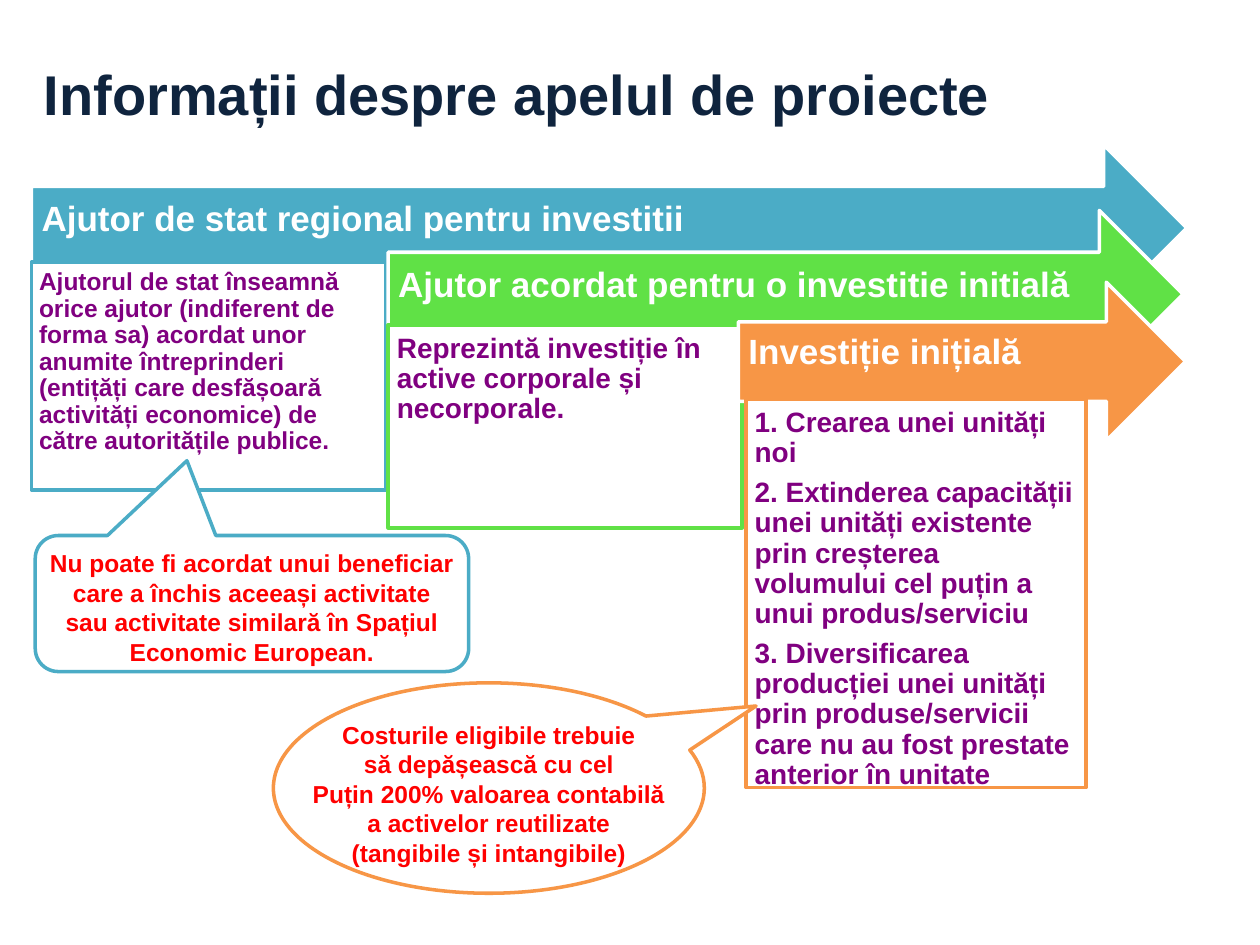
from pptx import Presentation
from pptx.dml.color import RGBColor
from pptx.enum.shapes import MSO_SHAPE
from pptx.enum.text import MSO_ANCHOR, PP_ALIGN
from pptx.util import Inches, Pt

NAVY, WHITE, PURPLE, RED = "0F243E", "FFFFFF", "800080", "FF0000"
TEAL, GREEN, ORANGE = "4BACC6", "60E146", "F79646"

# Each stage: colour, heading, arrow box, body box, body size, body inset, paragraphs
STAGES = [
    (TEAL, "Ajutor de stat regional pentru investitii",
     (0.25, 1.15, 9.17, 1.32), (0.25, 2.08, 2.81, 1.81), 14, 0.06,
     ["Ajutorul de stat înseamnă orice ajutor (indiferent de forma sa) acordat "
      "unor anumite întreprinderi (entițăți care desfășoară activități economice) "
      "de către autoritățile publice."]),
    (GREEN, "Ajutor acordat pentru o investitie initială",
     (3.08, 1.67, 6.31, 1.33), (3.08, 2.58, 2.81, 1.61), 16, 0.07,
     ["Reprezintă investiție în active corporale și necorporale."]),
    (ORANGE, "Investiție inițială",
     (5.86, 2.24, 3.55, 1.26), (5.92, 3.17, 2.7, 3.08), 16, 0.07,
     ["1. Crearea unei unități noi",
      "2. Extinderea capacității unei unități existente prin creșterea volumului "
      "cel puțin a unui produs/serviciu",
      "3. Diversificarea producției unei unități prin produse/servicii care nu au "
      "fost prestate anterior în unitate"]),
]

COST_LINES = ["Costurile eligibile trebuie", "să depășească cu cel",
              "Puțin 200% valoarea contabilă", "a activelor reutilizate",
              "(tangibile și intangibile)"]
BENEFICIARY_LINES = ["Nu poate fi acordat unui beneficiar",
                     "care a închis aceeași activitate",
                     "sau activitate similară în Spațiul", "Economic European."]


def rgb(value):
    return RGBColor.from_string(value)


def add_outlined_shape(page, kind, box, fill, line, adjustments=()):
    shape = page.shapes.add_shape(kind, *map(Inches, box))
    shape.shadow.inherit = False
    shape.fill.solid()
    shape.fill.fore_color.rgb = rgb(fill)
    shape.line.color.rgb = rgb(line)
    shape.line.width = Pt(2)
    for index, value in enumerate(adjustments):
        shape.adjustments[index] = value
    return shape


def write_text(shape, lines, size, color, align=PP_ALIGN.LEFT, anchor=MSO_ANCHOR.TOP,
               insets=(0.1, 0.05, 0.1, 0.05), wrap=True, spacing=1.0, gap=0):
    """Fill a shape with bold paragraphs; insets run left, top, right, bottom."""
    frame = shape.text_frame
    frame.word_wrap = wrap
    frame.vertical_anchor = anchor
    (frame.margin_left, frame.margin_top,
     frame.margin_right, frame.margin_bottom) = map(Inches, insets)
    for index, line in enumerate(lines):
        para = frame.add_paragraph() if index else frame.paragraphs[0]
        para.text = line
        para.alignment = align
        para.line_spacing = spacing
        para.space_after = Pt(gap)
        para.font.name = "Arial"
        para.font.size = Pt(size)
        para.font.bold = True
        para.font.color.rgb = rgb(color)


def add_title(page, box, text):
    title = page.shapes.add_textbox(*map(Inches, box))
    write_text(title, [text], 32, NAVY)


def add_stage(page, color, heading, arrow_box, body_box, size, inset, lines):
    """Arrow with a heading, and the outlined explanation under it."""
    arrow = add_outlined_shape(page, MSO_SHAPE.RIGHT_ARROW, arrow_box, color, WHITE,
                               (0.5, 0.5))
    write_text(arrow, [heading], 20, WHITE, anchor=MSO_ANCHOR.MIDDLE,
               insets=(0.08, 0.08, 0.28, 0.21), spacing=0.9)
    body = add_outlined_shape(page, MSO_SHAPE.RECTANGLE, body_box, WHITE, color)
    write_text(body, lines, size, PURPLE, insets=(inset,) * 4, spacing=0.9,
               gap=0.35 * size)


def add_callout(page, kind, box, color, adjustments, lines):
    callout = add_outlined_shape(page, kind, box, WHITE, color, adjustments)
    write_text(callout, lines, 14, RED, align=PP_ALIGN.CENTER, wrap=False)


def main():
    deck = Presentation()
    deck.slide_width, deck.slide_height = Inches(10), Inches(7.5)
    page = deck.slides.add_slide(deck.slide_layouts[6])
    add_title(page, (0.25, 0.42, 9.67, 0.87), "Informații despre apelul de proiecte")
    for stage in STAGES:
        add_stage(page, *stage)
    add_callout(page, MSO_SHAPE.OVAL_CALLOUT, (2.17, 5.42, 3.42, 1.67), ORANGE,
                (0.62, -0.39), COST_LINES)
    add_callout(page, MSO_SHAPE.ROUNDED_RECTANGULAR_CALLOUT, (0.28, 4.25, 3.44, 1.08),
                TEAL, (-0.15, -1.05, 0.17), BENEFICIARY_LINES)
    deck.save("out.pptx")


if __name__ == "__main__":
    main()
